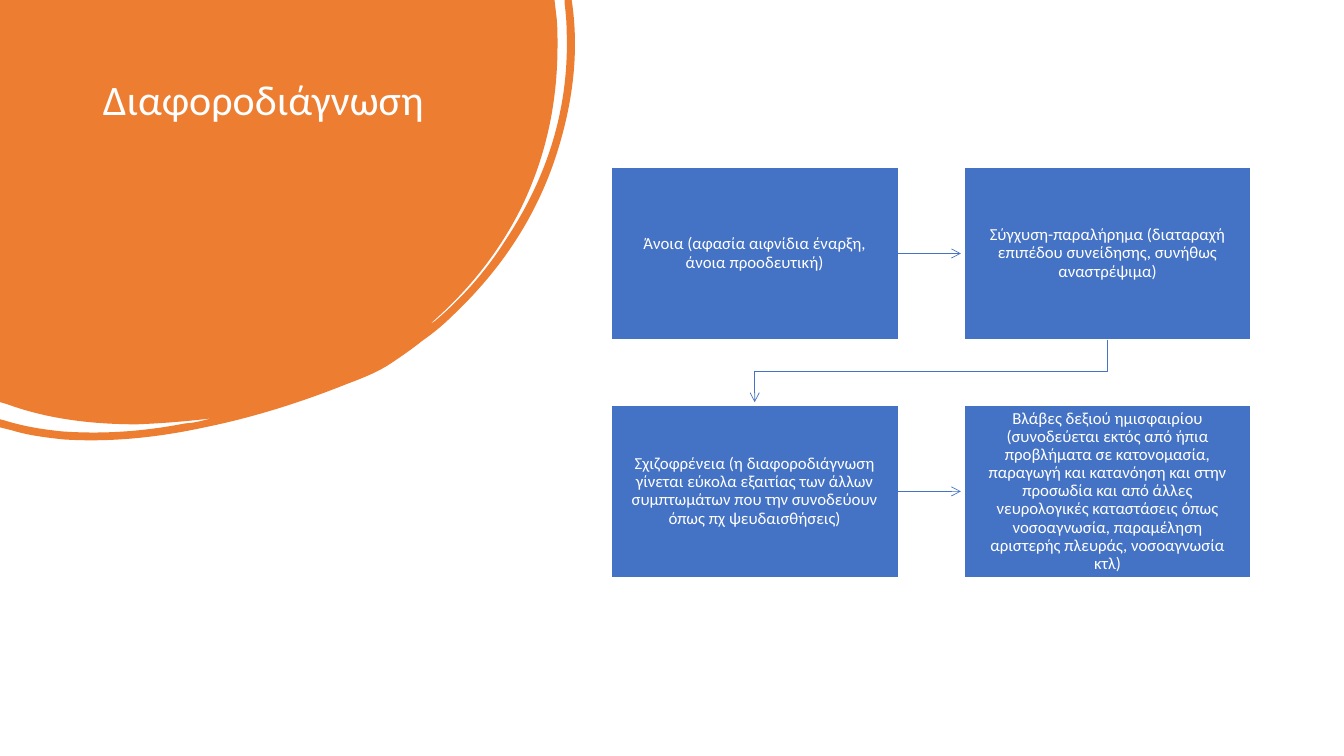
from lxml import etree
from pptx import Presentation
from pptx import util as u
from pptx.dml.color import RGBColor
from pptx.enum import shapes, text
from pptx.oxml.ns import qn

HUES = {"blob": "ED7D31", "card": "4472C4", "white": "FFFFFF"}
FONT = "Calibri"

# Grid of cards, in inches
LEFT, TOP = 6.06, 1.66
WIDE, HIGH = 2.85, 1.71
STEP_X, STEP_Y = 3.5, 2.36
GAP = 0.03  # room left between an arrow tip and its card
BAND = 0.1  # height of the frame around a straight arrow

CARDS = [
    "Άνοια (αφασία αιφνίδια έναρξη, άνοια προοδευτική)",
    "Σύγχυση-παραλήρημα (διαταραχή επιπέδου συνείδησης, συνήθως αναστρέψιμα)",
    "Σχιζοφρένεια (η διαφοροδιάγνωση γίνεται εύκολα εξαιτίας των άλλων "
    "συμπτωμάτων που την συνοδεύουν όπως πχ ψευδαισθήσεις)",
    "Βλάβες δεξιού ημισφαιρίου (συνοδεύεται εκτός από ήπια προβλήματα σε "
    "κατονομασία, παραγωγή και κατανόηση και στην προσωδία και από άλλες "
    "νευρολογικές καταστάσεις όπως νοσοαγνωσία, παραμέληση αριστερής "
    "πλευράς, νοσοαγνωσία κτλ)",
]

# Two numbers are a corner; six are a curve with two handles and an end
BLOB = [
    (0, 0), (5.5, 0), (5.52, 0.17),
    (5.53, 0.26, 5.53, 0.36, 5.53, 0.45),
    (5.53, 1.01, 5.42, 1.54, 5.18, 2.04),
    (4.96, 2.49, 4.65, 2.88, 4.27, 3.21),
    (4.29, 3.21, 4.3, 3.19, 4.32, 3.18),
    (4.59, 2.95, 4.82, 2.69, 5.01, 2.39),
    (5.43, 1.76, 5.65, 1.07, 5.62, 0.3),
    (5.62, 0.21, 5.61, 0.12, 5.6, 0.03),
    (5.6, 0), (5.67, 0), (5.68, 0.07),
    (5.74, 0.54, 5.68, 1.02, 5.53, 1.5),
    (5.33, 2.14, 4.97, 2.68, 4.48, 3.14),
    (4.39, 3.23, 4.29, 3.31, 4.19, 3.38),
    (4.09, 3.46, 3.99, 3.53, 3.87, 3.61),
    (3.75, 3.69, 3.6, 3.75, 3.44, 3.81),
    (2.99, 3.99, 2.52, 4.14, 2.03, 4.24),
    (1.57, 4.34, 1.1, 4.39, 0.63, 4.36),
    (0.45, 4.34, 0.28, 4.32, 0.12, 4.27),
    (0, 4.24), (0, 4.16), (0.04, 4.17),
    (0.23, 4.23, 0.42, 4.26, 0.61, 4.28),
    (1.03, 4.31, 1.43, 4.28, 1.84, 4.2),
    (1.89, 4.2, 1.93, 4.19, 1.98, 4.18),
    (2.02, 4.17, 2.06, 4.16, 2.1, 4.15),
    (1.86, 4.18, 1.61, 4.2, 1.36, 4.21),
    (0.92, 4.21, 0.48, 4.16, 0.07, 4.01),
    (0, 3.99),
]


def hue(name):
    return RGBColor.from_string(HUES[name])


def outline(slide, left, top, wide, high, parts, close=False):
    """Frame a freeform by its box, then lay corners and curves inside it."""
    pen = slide.shapes.build_freeform(u.Inches(left), u.Inches(top))
    pen.add_line_segments([(u.Inches(left + wide), u.Inches(top + high))], close=False)
    shape = pen.convert_to_shape()
    shape.shadow.inherit = False
    route = next(shape._element.iter(qn("a:path")))
    for step in list(route):
        route.remove(step)
    for i, part in enumerate(parts):
        tag = "a:moveTo" if i == 0 else "a:lnTo" if len(part) == 2 else "a:cubicBezTo"
        step = etree.SubElement(route, qn(tag))
        for x, y in zip(part[::2], part[1::2]):
            etree.SubElement(step, qn("a:pt"), x=str(u.Inches(x)), y=str(u.Inches(y)))
    if close:
        etree.SubElement(route, qn("a:close"))
    return shape


def write(shape, words, size=12, align="CENTER", anchor="MIDDLE", pad=(0.14, 0.15)):
    frame = shape.text_frame
    frame.word_wrap = True
    frame.auto_size = text.MSO_AUTO_SIZE.NONE
    frame.vertical_anchor = text.MSO_ANCHOR[anchor]
    frame.margin_left = frame.margin_right = u.Inches(pad[0])
    frame.margin_top = frame.margin_bottom = u.Inches(pad[1])
    para = frame.paragraphs[0]
    para.alignment = text.PP_ALIGN[align]
    para.line_spacing = 0.9
    run = para.add_run()
    run.text = words
    run.font.size, run.font.name = u.Pt(size), FONT
    run.font.color.rgb = hue("white")


def paint(shape, fill):
    shape.fill.solid()
    shape.fill.fore_color.rgb = hue(fill)


def blob(slide):
    shape = outline(slide, 0, 0, 5.71, 4.37, BLOB, close=True)
    paint(shape, "blob")
    shape.line.fill.background()


def title(slide, words):
    shape = slide.shapes.title
    shape.left, shape.top = u.Inches(0.92), u.Inches(0.74)
    shape.width, shape.height = u.Inches(3.52), u.Inches(2.22)
    write(shape, words, size=30, align="LEFT", anchor="TOP", pad=(0.1, 0.05))


def card(slide, col, row, words):
    spot = (LEFT + col * STEP_X, TOP + row * STEP_Y, WIDE, HIGH)
    shape = slide.shapes.add_shape(shapes.MSO_SHAPE.RECTANGLE, *map(u.Inches, spot))
    shape.shadow.inherit = False
    paint(shape, "card")
    shape.line.color.rgb, shape.line.width = hue("white"), u.Pt(1)
    write(shape, words)


def point(shape):
    """Give a line its colour, width and open arrowhead."""
    shape.line.color.rgb, shape.line.width = hue("card"), u.Pt(0.5)
    etree.SubElement(shape.line._get_or_add_ln(), qn("a:tailEnd"), type="arrow")


def across(slide, row):
    y = TOP + row * STEP_Y + HIGH / 2
    long = STEP_X - WIDE - GAP
    shape = outline(slide, LEFT + WIDE, y - BAND / 2, long, BAND,
                    [(0, BAND / 2), (long, BAND / 2)])
    shape.fill.background()
    point(shape)


def wrap(slide):
    """Lead from the end of the first row to the start of the second."""
    drop = STEP_Y - HIGH - GAP
    x = LEFT + (WIDE + STEP_X) / 2
    y = TOP + HIGH + drop / 2
    ends = (x - drop / 2, y - STEP_X / 2, x + drop / 2, y + STEP_X / 2)
    link = slide.shapes.add_connector(shapes.MSO_CONNECTOR.ELBOW, *map(u.Inches, ends))
    link.rotation = 90
    point(link)
    etree.SubElement(link._element.spPr, qn("a:effectLst"))


def main():
    deck = Presentation()
    deck.slide_width, deck.slide_height = u.Inches(13.33), u.Inches(7.5)
    slide = deck.slides.add_slide(deck.slide_layouts.get_by_name("Title Only"))
    blob(slide)
    title(slide, "Διαφοροδιάγνωση")
    # Bring the title in front of the blob
    slide.shapes._spTree.append(slide.shapes.title._element)
    for i, words in enumerate(CARDS):
        card(slide, i % 2, i // 2, words)
    for row in range(2):
        across(slide, row)
    wrap(slide)
    deck.save("out.pptx")


if __name__ == "__main__":
    main()
